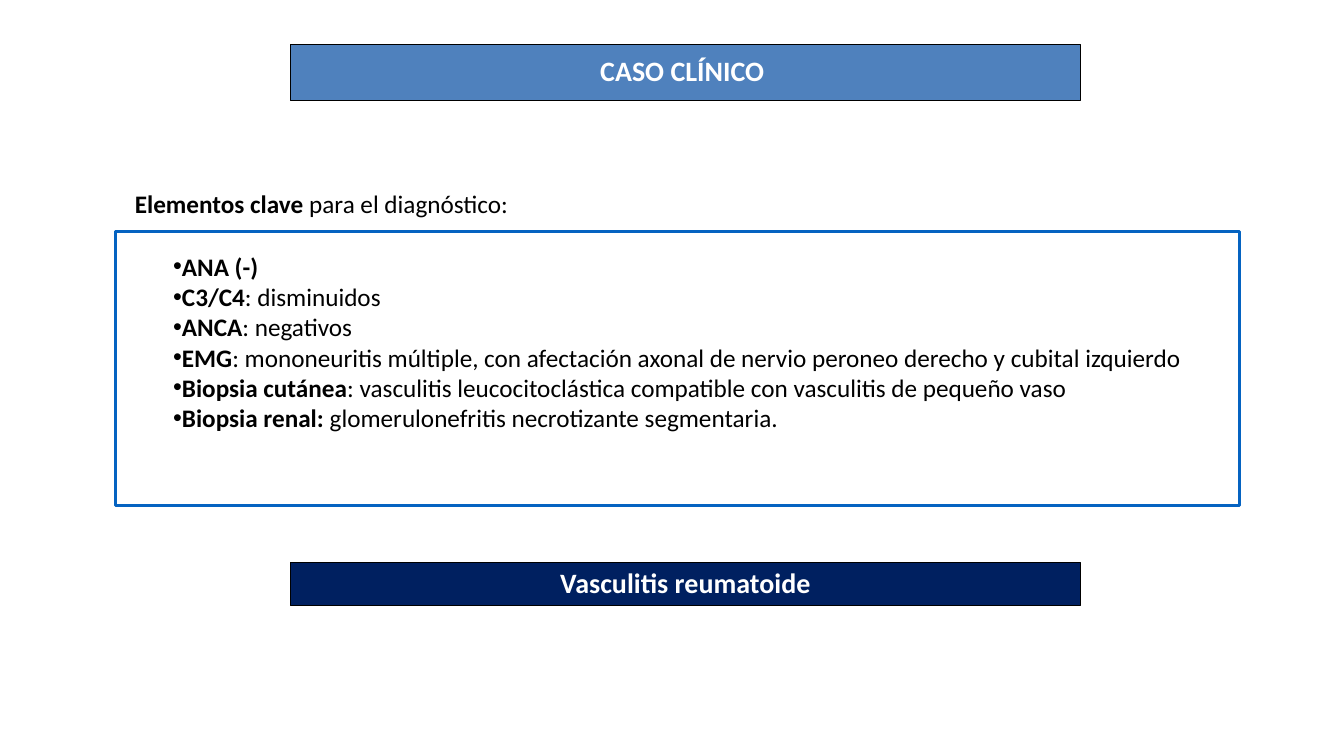
"""Build the clinical case slide with its key findings and diagnosis."""
import pptx
import pptx.dml.color
import pptx.enum.shapes
import pptx.enum.text
import pptx.util

Cm = pptx.util.Cm
Pt = pptx.util.Pt
ALIGN = pptx.enum.text.PP_ALIGN
ANCHOR = pptx.enum.text.MSO_ANCHOR
FIT = pptx.enum.text.MSO_AUTO_SIZE
RECT = pptx.enum.shapes.MSO_SHAPE.RECTANGLE

BLACK = "000000"
WHITE = "FFFFFF"
BAR_X, BAR_W = 7.32, 19.91
ITEMS = [
    ("ANA (-)", ""),
    ("C3/C4", ": disminuidos"),
    ("ANCA", ": negativos"),
    ("EMG", ": mononeuritis múltiple, con afectación axonal de nervio "
            "peroneo derecho y cubital izquierdo"),
    ("Biopsia cutánea", ": vasculitis leucocitoclástica compatible con "
                        "vasculitis de pequeño vaso"),
    ("Biopsia renal: ", "glomerulonefritis necrotizante segmentaria."),
]


def color(code):
    """Turn a hex string into a colour."""
    return pptx.dml.color.RGBColor.from_string(code)


def place(shape, left, top, width, height):
    """Move and size a shape, in centimetres."""
    shape.left, shape.top = Cm(left), Cm(top)
    shape.width, shape.height = Cm(width), Cm(height)


def style(para, size, code):
    """Set the font of a paragraph."""
    para.font.name = "Calibri"
    para.font.size = Pt(size)
    para.font.color.rgb = color(code)


def border(shape, code, width):
    """Give a shape its outline."""
    shape.line.color.rgb = color(code)
    shape.line.width = Pt(width)


def add_rect(slide):
    """Add a plain rectangle without shadow."""
    shape = slide.shapes.add_shape(RECT, 0, 0, 0, 0)
    shape.shadow.inherit = False
    return shape


def fill_bar(shape, text, top, height, code):
    """Make a shape a filled bar with a bold centred label."""
    place(shape, BAR_X, top, BAR_W, height)
    shape.fill.solid()
    shape.fill.fore_color.rgb = color(code)
    border(shape, BLACK, 0.75)
    frame = shape.text_frame
    frame.text = text
    frame.auto_size = FIT.NONE
    frame.word_wrap = False
    frame.vertical_anchor = ANCHOR.MIDDLE
    para = frame.paragraphs[0]
    para.alignment = ALIGN.CENTER
    para.line_spacing = 0.9
    style(para, 20, WHITE)
    para.font.bold = True


def add_pair(para, head, rest):
    """Write a bold head followed by plain text."""
    for text, bold in ((head, True), (rest, False)):
        if text:
            run = para.add_run()
            run.text = text
            run.font.bold = bold
    style(para, 18, BLACK)


def fill_list(body):
    """Write the findings as a bulleted list."""
    place(body, 4.11, 6.2, 26.67, 4.88)
    frame = body.text_frame
    frame.auto_size = FIT.NONE
    for index, (head, rest) in enumerate(ITEMS):
        para = frame.add_paragraph() if index else frame.paragraphs[0]
        add_pair(para, head, rest)
        para.space_before = Pt(0)
        props = para._p.get_or_add_pPr()
        props.set("marL", "0")
        props.set("indent", "0")


def add_intro(slide):
    """Add the line that leads into the list."""
    box = slide.shapes.add_textbox(Cm(3.15), Cm(4.62), Cm(16.94), Cm(1.02))
    box.text_frame.word_wrap = True
    para = box.text_frame.paragraphs[0]
    para.alignment = ALIGN.JUSTIFY
    add_pair(para, "Elementos clave ", "para el diagnóstico:")


def add_frame(slide):
    """Add the outline around the list."""
    shape = add_rect(slide)
    place(shape, 2.92, 5.84, 28.32, 6.91)
    shape.fill.background()
    border(shape, "0563C1", 2)


def main():
    """Build and save the slide."""
    deck = pptx.Presentation()
    deck.slide_width, deck.slide_height = Cm(33.87), Cm(19.05)
    slide = deck.slides.add_slide(deck.slide_layouts[1])
    fill_bar(slide.shapes.title, "CASO CLÍNICO ", 1.12, 1.42, "4F81BD")
    fill_list(slide.placeholders[1])
    add_intro(slide)
    fill_bar(add_rect(slide), "Vasculitis reumatoide", 14.17, 1.09, "002060")
    add_frame(slide)
    deck.save("out.pptx")


if __name__ == "__main__":
    main()
